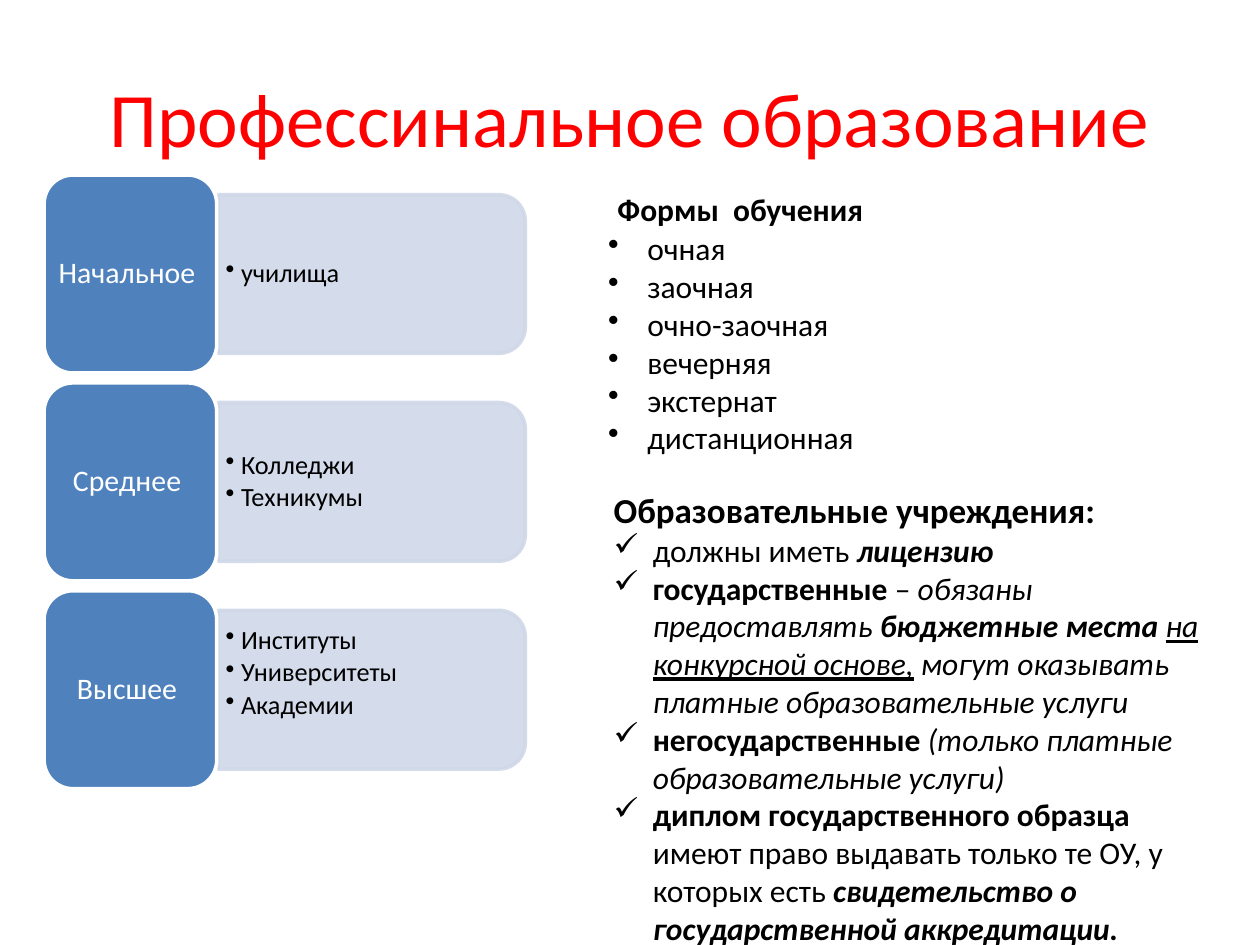
from dataclasses import dataclass

from lxml.etree import SubElement
from pptx import Presentation
from pptx.dml.color import RGBColor as Rgb
from pptx.enum.shapes import MSO_SHAPE as Shape
from pptx.enum.text import MSO_ANCHOR as Anchor, MSO_AUTO_SIZE as AutoSize, PP_ALIGN as Align
from pptx.oxml.ns import qn
from pptx.util import Cm, Pt


@dataclass(frozen=True)
class Theme:
    font: str = "Calibri"
    red: Rgb = Rgb(0xFF, 0x00, 0x00)
    black: Rgb = Rgb(0x00, 0x00, 0x00)
    white: Rgb = Rgb(0xFF, 0xFF, 0xFF)
    blue: Rgb = Rgb(0x4F, 0x81, 0xBD)
    pale: Rgb = Rgb(0xD0, 0xD8, 0xE8)
    title: int = 44
    heading: int = 20
    body: int = 18
    label: int = 17
    item: int = 15


@dataclass(frozen=True)
class Box:
    """A region of the page, in centimetres."""
    left: float
    top: float
    width: float
    height: float

    def lengths(self):
        return Cm(self.left), Cm(self.top), Cm(self.width), Cm(self.height)


THEME = Theme()

LEVELS = [
    ("Начальное ", ["училища"]),
    ("Среднее ", ["Колледжи", "Техникумы"]),
    ("Высшее ", ["Институты", "Университеты", "Академии"]),
]
FORMS = ["очная", "заочная", "очно-заочная", "вечерняя", "экстернат", "дистанционная"]

# Each rule is a list of (text, style) with b = bold, i = italic, u = underlined
RULES = [
    [("должны иметь ", ""), ("лицензию", "bi")],
    [("государственные", "b"), (" – ", ""), ("обязаны предоставлять ", "i"),
     ("бюджетные места ", "bi"), ("на конкурсной основе,", "iu"),
     (" могут оказывать платные образовательные услуги", "i")],
    [("негосударственные ", "b"), ("(только платные образовательные услуги)", "i")],
    [("диплом государственного образца ", "b"),
     ("имеют право выдавать только те ОУ, у которых есть ", ""),
     ("свидетельство о государственной аккредитации.", "bi")],
]


def format_runs(para, size, color, bold=False):
    for span in para.runs:
        font = span.font
        font.name, font.size, font.bold = THEME.font, Pt(size), bold
        font.color.rgb = color


def add_bullet(para, mark, indent):
    props = para._p.get_or_add_pPr()
    props.set("marL", str(Cm(indent)))
    props.set("indent", str(-Cm(indent)))
    SubElement(props, qn("a:buChar")).set("char", mark)


def set_insets(frame, side, top, bottom):
    frame.margin_left = frame.margin_right = Cm(side)
    frame.margin_top, frame.margin_bottom = Cm(top), Cm(bottom)


def set_opacity(fill, percent):
    color = fill._xPr.find(qn("a:solidFill"))[0]
    SubElement(color, qn("a:alpha")).set("val", str(percent * 1000))


def add_text_box(page, box, grow=True):
    frame = page.shapes.add_textbox(*box.lengths()).text_frame
    frame.word_wrap = True
    if grow:
        frame.auto_size = AutoSize.SHAPE_TO_FIT_TEXT
    return frame


def add_block(page, kind, box, fill, line):
    block = page.shapes.add_shape(kind, *box.lengths())
    block.shadow.inherit = False
    block.fill.solid()
    block.fill.fore_color.rgb = fill
    block.line.color.rgb = line
    block.line.width = Pt(2)
    return block


def place_title(page, box):
    title = page.shapes.title
    title.left, title.top, title.width, title.height = box.lengths()
    frame = title.text_frame
    frame.text = "Профессинальное образование"
    frame.vertical_anchor = Anchor.MIDDLE
    frame.paragraphs[0].alignment = Align.CENTER
    format_runs(frame.paragraphs[0], THEME.title, THEME.red)


def place_level(page, box, name, items):
    label_width, panel_height = 3.48, 3.2
    panel_left = box.left + label_width + 0.03
    panel_width = box.left + box.width - panel_left
    middle = box.top + box.height / 2

    # Pale panel: drawn upright, then turned so its round corners face right
    upright = Box(panel_left + (panel_width - panel_height) / 2, middle - panel_width / 2,
                  panel_height, panel_width)
    panel = add_block(page, Shape.ROUND_2_SAME_RECTANGLE, upright, THEME.pale, THEME.pale)
    panel.rotation = 90
    for fill in (panel.fill, panel.line.fill):
        set_opacity(fill, 90)

    # Institutions listed on the panel; the longest list sits higher
    frame = add_text_box(page, Box(panel_left, middle - 1.45, panel_width - 0.15, 2.9), grow=False)
    frame.vertical_anchor = Anchor.MIDDLE
    set_insets(frame, 0.15, 0.08, 0.74 if len(items) > 2 else 0.08)
    frame.text = "\n".join(items)
    for para in frame.paragraphs:
        para.line_spacing, para.space_after = 0.9, Pt(2.25)
        add_bullet(para, "•", 0.31)
        format_runs(para, THEME.item, THEME.black)

    # Blue label
    label = add_block(page, Shape.ROUNDED_RECTANGLE,
                      Box(box.left, box.top, label_width, box.height), THEME.blue, THEME.white)
    frame = label.text_frame
    frame.word_wrap = True
    frame.vertical_anchor = Anchor.MIDDLE
    set_insets(frame, 0.1, 0.1, 0.1)
    frame.text = name
    frame.paragraphs[0].alignment = Align.CENTER
    frame.paragraphs[0].line_spacing = 0.9
    format_runs(frame.paragraphs[0], THEME.label, THEME.white)


def place_levels(page, box, gap=0.2):
    height = (box.height - gap * (len(LEVELS) - 1)) / len(LEVELS)
    for row, (name, items) in enumerate(LEVELS):
        top = box.top + row * (height + gap)
        place_level(page, Box(box.left, top, box.width, height), name, items)


def place_forms(page, box):
    # Heading
    para = add_text_box(page, Box(box.left, box.top, box.width, 1.02)).paragraphs[0]
    para.text = "Формы  обучения"
    para.alignment = Align.CENTER
    format_runs(para, THEME.body, THEME.black, bold=True)

    # Forms of study
    frame = add_text_box(page, Box(box.left + 0.68, box.top + 0.79, 6.6, box.height - 0.79))
    frame.text = "\n".join(FORMS)
    for para in frame.paragraphs:
        add_bullet(para, "•", 0.79)
        format_runs(para, THEME.body, THEME.black)


def place_rules(page, box):
    frame = add_text_box(page, box)
    frame.text = "Образовательные учреждения:"
    format_runs(frame.paragraphs[0], THEME.heading, THEME.black, bold=True)
    for rule in RULES:
        para = frame.add_paragraph()
        add_bullet(para, "✓", 0.79)
        for text, _ in rule:
            para.add_run().text = text
        format_runs(para, THEME.body, THEME.black)
        for span, (_, style) in zip(para.runs, rule):
            span.font.bold = "b" in style
            span.font.italic = "i" in style
            span.font.underline = "u" in style


def main():
    deck = Presentation()
    deck.slide_width, deck.slide_height = Cm(25.4), Cm(19.05)
    page = deck.slides.add_slide(deck.slide_layouts[5])
    place_title(page, Box(1.27, 0.76, 22.86, 3.18))
    place_levels(page, Box(0.89, 3.53, 9.7, 12.37))
    place_forms(page, Box(11.33, 3.71, 7.19, 5.67))
    place_rules(page, Box(12.12, 9.73, 12.8, 9.58))
    deck.save("out.pptx")


if __name__ == "__main__":
    main()
